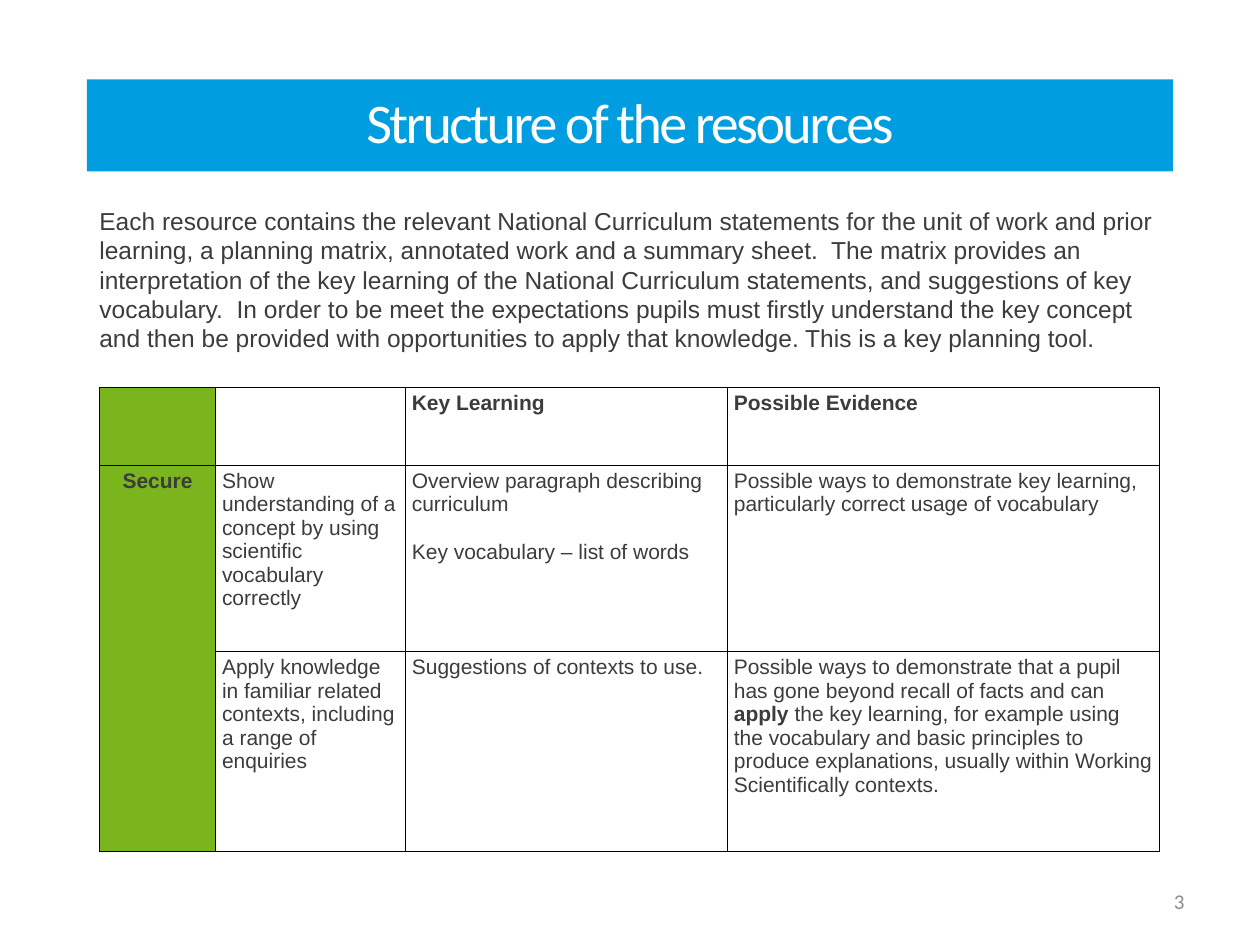
"""Build the slide on the structure of the resources."""
from lxml import etree
from pptx import Presentation
from pptx.dml.color import RGBColor
from pptx.enum.shapes import MSO_SHAPE
from pptx.enum.text import MSO_ANCHOR, PP_ALIGN
from pptx.oxml.ns import qn
from pptx.util import Pt

RECT = MSO_SHAPE.RECTANGLE
TOP, MIDDLE = MSO_ANCHOR.TOP, MSO_ANCHOR.MIDDLE
LEFT, CENTER, RIGHT = PP_ALIGN.LEFT, PP_ALIGN.CENTER, PP_ALIGN.RIGHT
BLUE = RGBColor(0x00, 0x9E, 0xE0)
GREEN = RGBColor(0x7A, 0xB5, 0x1D)
DARK = RGBColor(0x3C, 0x3C, 0x3C)
GREY = RGBColor(0x8C, 0x8C, 0x8C)
WHITE = RGBColor(0xFF, 0xFF, 0xFF)
BLACK = RGBColor(0x00, 0x00, 0x00)

BODY = {"name": "Arial", "size": Pt(14), "color": DARK}
CELL = {"name": "Arial", "size": Pt(12), "color": DARK}
HEAD = CELL | {"bold": True}
TITLE = {"name": "Calibri", "size": Pt(32), "color": WHITE}
NUMBER = {"name": "Calibri", "size": Pt(12), "color": GREY}


def write(para, text, style, align=LEFT):
    para.alignment = align
    run = para.add_run()
    run.text = text
    for key, value in style.items():
        if key == "color":
            run.font.color.rgb = value
        else:
            setattr(run.font, key, value)
    return run


def border(cell):
    props = cell._tc.get_or_add_tcPr()
    for side in ("lnL", "lnR", "lnT", "lnB"):
        line = etree.SubElement(props, qn(f"a:{side}"), w=str(Pt(0.75)))
        fill = etree.SubElement(line, qn("a:solidFill"))
        etree.SubElement(fill, qn("a:srgbClr"), val=str(BLACK))


deck = Presentation()
deck.slide_width, deck.slide_height = Pt(720), Pt(540)
slide = deck.slides.add_slide(deck.slide_layouts[6])
shapes = slide.shapes

widths = (66.5, 108.5, 184, 247)
heights = (44.6, 106.4, 114.4)
rows = (
    ((), (), (("Key Learning", HEAD),), (("Possible Evidence", HEAD),)),
    (
        (("Secure", HEAD),),
        (("Show understanding of a concept by using scientific vocabulary correctly", CELL),),
        (("Overview paragraph describing curriculum", CELL),),
        (("Possible ways to demonstrate key learning, particularly correct usage of vocabulary", CELL),),
    ),
    (
        (),
        (("Apply knowledge in familiar related contexts, including a range of enquiries", CELL),),
        (("Suggestions of contexts to use.", CELL),),
        (
            ("Possible ways to demonstrate that a pupil has gone beyond recall of facts and can ", CELL),
            ("apply", HEAD),
            (" the key learning, for example using the vocabulary and basic principles to produce "
             "explanations, usually within Working Scientifically contexts.", CELL),
        ),
    ),
)
table = shapes.add_table(
    len(rows), len(widths), Pt(56.8), Pt(221.4), Pt(sum(widths)), Pt(sum(heights))
).table
table.first_row = table.horz_banding = False
for col, width in zip(table.columns, widths):
    col.width = Pt(width)
for row, height in zip(table.rows, heights):
    row.height = Pt(height)
for r, row in enumerate(rows):
    for c, parts in enumerate(row):
        cell = table.cell(r, c)
        cell.margin_left = cell.margin_right = Pt(3.6)
        cell.margin_top = cell.margin_bottom = Pt(2.2)
        border(cell)
        if c == 0:
            cell.fill.solid()
            cell.fill.fore_color.rgb = GREEN
        else:
            cell.fill.background()
        for text, style in parts:
            write(cell.text_frame.paragraphs[0], text, style, LEFT if c else CENTER)
table.cell(1, 0).merge(table.cell(2, 0))
words = table.cell(1, 2).text_frame.add_paragraph()
words.space_before = Pt(13.5)
write(words, "Key vocabulary – list of words", CELL)

intro = (
    "Each resource contains the relevant National Curriculum statements for the unit of work "
    "and prior learning, a planning matrix, annotated work and a summary sheet.  The matrix "
    "provides an interpretation of the key learning of the National Curriculum statements, and "
    "suggestions of key vocabulary.  In order to be meet the expectations pupils must firstly "
    "understand the key concept and then be provided with opportunities to apply that "
    "knowledge. This is a key planning tool."
)
for box, anchor, text, style, align in (
    ((49.7, 114, 620.6, 107), TOP, intro, BODY, LEFT),
    ((516.2, 500.4, 167.8, 28.8), MIDDLE, "3", NUMBER, RIGHT),
):
    frame = shapes.add_textbox(*map(Pt, box)).text_frame
    frame.word_wrap = True
    frame.vertical_anchor = anchor
    write(frame.paragraphs[0], text, style, align)

band = shapes.add_shape(RECT, Pt(49.7), Pt(45.4), Pt(620.6), Pt(52.6))
band.shadow.inherit = False
band.fill.solid()
band.fill.fore_color.rgb = BLUE
band.line.fill.background()
band.text_frame.word_wrap = True
band.text_frame.vertical_anchor = MIDDLE
title = band.text_frame.paragraphs[0]
title.line_spacing = 0.9
run = write(title, "Structure of the resources", TITLE, CENTER)
run._r.get_or_add_rPr().set("spc", "-150")

deck.save("out.pptx")
